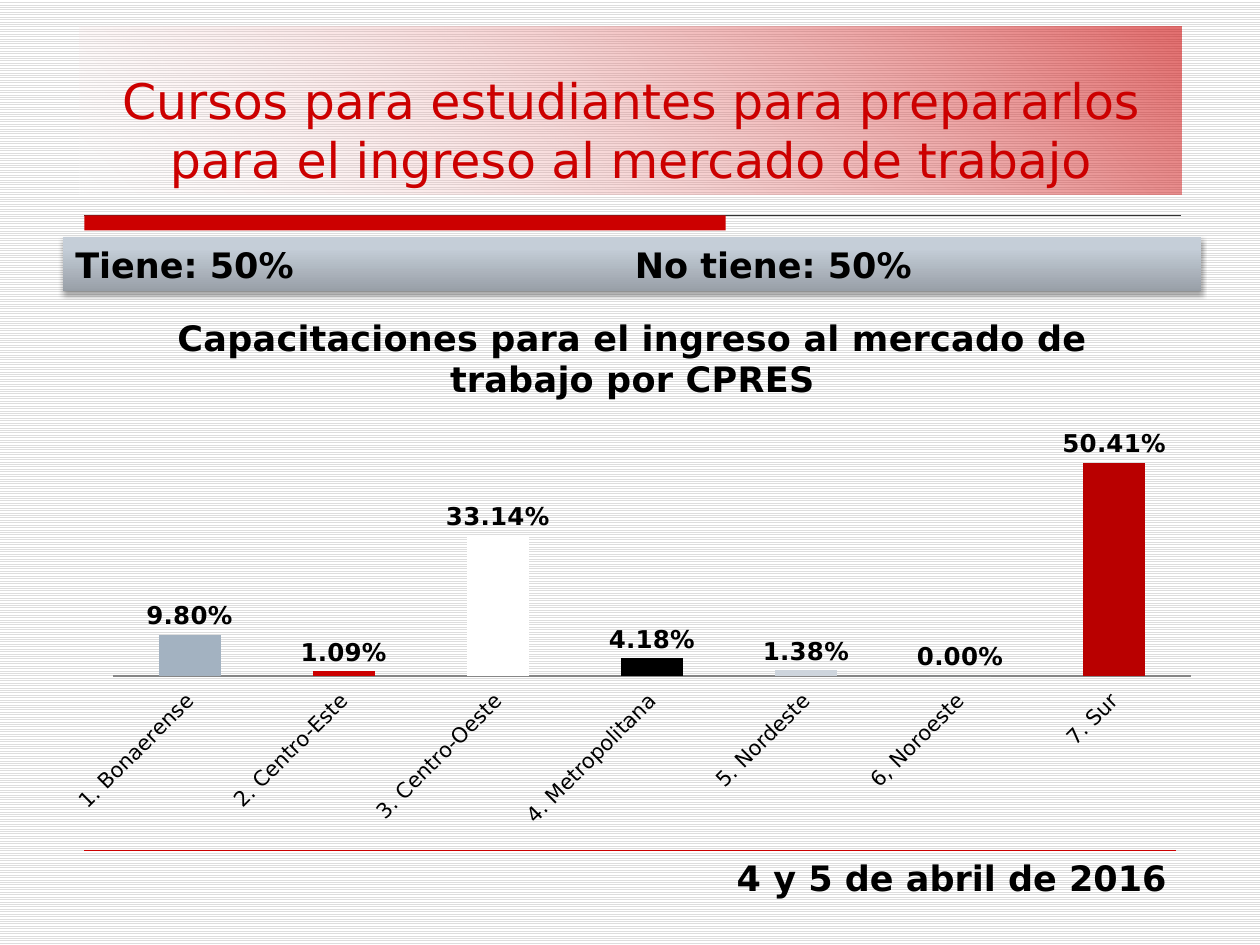
"""Build the slide on job-market preparation courses for students."""
from lxml.etree import SubElement
from pptx import Presentation
from pptx.chart.data import CategoryChartData
from pptx.dml.color import RGBColor
from pptx.enum.chart import XL_CHART_TYPE as ChartType
from pptx.enum.chart import XL_LABEL_POSITION as LabelPos
from pptx.enum.chart import XL_TICK_LABEL_POSITION as TickPos
from pptx.enum.chart import XL_TICK_MARK as Tick
from pptx.enum.dml import MSO_PATTERN as Pattern
from pptx.enum.shapes import MSO_CONNECTOR as Connector
from pptx.enum.shapes import MSO_SHAPE as Shape
from pptx.enum.text import MSO_ANCHOR as Anchor
from pptx.enum.text import PP_ALIGN as Align
from pptx.oxml import parse_xml
from pptx.oxml.ns import nsdecls, qn
from pptx.util import Pt

FONT = "DejaVu Sans"
RED = RGBColor(0xCC, 0x00, 0x00)
BLACK = RGBColor(0x00, 0x00, 0x00)
WHITE = RGBColor(0xFF, 0xFF, 0xFF)
STRIPE = RGBColor(0xDD, 0xDD, 0xDD)
RULE = RGBColor(0x33, 0x33, 0x33)
AXIS = RGBColor(0x86, 0x86, 0x86)
STEEL = RGBColor(0xA3, 0xB2, 0xC1)
MIST = RGBColor(0xCE, 0xD5, 0xDD)
DEEP_RED = RGBColor(0xB9, 0x00, 0x00)
BAND_DARK = RGBColor(0x98, 0x9F, 0xA7)
BAND_MID = RGBColor(0xC5, 0xCE, 0xD8)
BAND_LIGHT = RGBColor(0xC6, 0xCF, 0xDA)

HEADING = "Cursos para estudiantes para prepararlos para el ingreso al mercado de trabajo"
SHARES = ("Tiene: 50%", "No tiene: 50%")
DATE = "4 y 5 de abril de 2016"
CHART_TITLE = "Capacitaciones para el ingreso al mercado de trabajo por CPRES"
REGIONS = [
    ("1. Bonaerense", 0.098, STEEL),
    ("2. Centro-Este", 0.0109, RED),
    ("3. Centro-Oeste", 0.3314, WHITE),
    ("4. Metropolitana", 0.0418, BLACK),
    ("5. Nordeste", 0.0138, MIST),
    ("6, Noroeste", 0, STEEL),
    ("7. Sur", 0.5041, DEEP_RED),
]
HEADING_STOPS = [(0, WHITE, 16), (100, RED, 57)]
BAND_STOPS = [(0, BAND_DARK, 100), (80, BAND_MID, 100), (100, BAND_LIGHT, 100)]


def style(font, size, color=BLACK, bold=False):
    font.name, font.size, font.bold = FONT, Pt(size), bold
    font.color.rgb = color


def write(frame, text, size=20, color=BLACK, bold=True, align=Align.LEFT, anchor=Anchor.TOP):
    frame.word_wrap = True
    frame.vertical_anchor = anchor
    paragraph = frame.paragraphs[0]
    paragraph.alignment = align
    run = paragraph.add_run()
    run.text = text
    style(run.font, size, color, bold)
    return paragraph


def add_box(slide, left, top, width, height):
    box = slide.shapes.add_shape(Shape.RECTANGLE, Pt(left), Pt(top), Pt(width), Pt(height))
    box.shadow.inherit = False
    box.line.fill.background()
    return box


def add_rule(slide, left, right, y, color, weight):
    rule = slide.shapes.add_connector(Connector.STRAIGHT, Pt(left), Pt(y), Pt(right), Pt(y))
    rule.line.color.rgb = color
    rule.line.width = Pt(weight)
    SubElement(rule._element.spPr, qn("a:effectLst"))


def fill_gradient(box, stops, angle):
    marks = "".join(
        f'<a:gs pos="{pos * 1000}"><a:srgbClr val="{color}">'
        f'<a:alpha val="{alpha * 1000}"/></a:srgbClr></a:gs>'
        for pos, color, alpha in stops
    )
    gradient = parse_xml(
        f'<a:gradFill {nsdecls("a")} rotWithShape="1"><a:gsLst>{marks}</a:gsLst>'
        f'<a:lin ang="{angle * 60000}" scaled="0"/></a:gradFill>'
    )
    box._element.spPr.find(qn("a:prstGeom")).addnext(gradient)


def cast_shadow(box):
    effects = box._element.spPr.find(qn("a:effectLst"))
    effects.append(parse_xml(
        f'<a:outerShdw {nsdecls("a")} blurRad="{Pt(3.1)}" dist="{Pt(1.8)}" dir="5400000" '
        'rotWithShape="0"><a:srgbClr val="000000"><a:alpha val="35000"/></a:srgbClr></a:outerShdw>'
    ))


def add_region_chart(slide):
    data = CategoryChartData(number_format="0.00%")
    data.categories = [region for region, _, _ in REGIONS]
    data.add_series("Series 1", [share for _, share, _ in REGIONS])
    chart = slide.shapes.add_chart(
        ChartType.COLUMN_CLUSTERED, Pt(28.8), Pt(166.3), Pt(665.3), Pt(313.2), data
    ).chart
    style(chart.font, 10)
    chart.has_legend = False
    chart.has_title = True
    write(chart.chart_title.text_frame, CHART_TITLE, align=Align.CENTER)
    chart.chart_title.include_in_layout = False

    regions = chart.category_axis
    regions.major_tick_mark = regions.minor_tick_mark = Tick.NONE
    regions.tick_label_position = TickPos.LOW
    regions.format.line.color.rgb = AXIS
    style(regions.tick_labels.font, 12)
    regions._element.find(qn("c:txPr")).find(qn("a:bodyPr")).set("rot", "-2700000")
    chart.value_axis.visible = False
    chart.value_axis.has_major_gridlines = False

    plot = chart.plots[0]
    plot.gap_width = 150
    plot.vary_by_categories = False
    columns = plot.series[0]
    columns.format.fill.solid()
    columns.format.fill.fore_color.rgb = STEEL
    for index, (_, _, color) in enumerate(REGIONS):
        fill = columns.points[index].format.fill
        fill.solid()
        fill.fore_color.rgb = color
    labels = columns.data_labels
    labels.show_value = True
    labels.position = LabelPos.OUTSIDE_END
    labels.number_format, labels.number_format_is_linked = "0.00%", False
    style(labels.font, 14, bold=True)


def main():
    deck = Presentation()
    deck.slide_width, deck.slide_height = Pt(720), Pt(540)
    slide = deck.slides.add_slide(deck.slide_layouts[6])
    backdrop = slide.background.fill
    backdrop.patterned()
    backdrop.pattern = Pattern.LIGHT_HORIZONTAL
    backdrop.fore_color.rgb, backdrop.back_color.rgb = STRIPE, WHITE

    add_rule(slide, 48.2, 674.6, 123.1, RULE, 0.75)
    accent = add_box(slide, 48.2, 123.1, 366.5, 8.6)
    accent.fill.solid()
    accent.fill.fore_color.rgb = RED
    add_rule(slide, 48.2, 671.8, 486, RED, 0.25)

    heading = add_box(slide, 45.4, 15.1, 630, 95.8)
    fill_gradient(heading, HEADING_STOPS, 315)
    write(heading.text_frame, HEADING, size=28, color=RED, bold=False,
          align=Align.CENTER, anchor=Anchor.BOTTOM)

    date = slide.shapes.add_textbox(Pt(23.8), Pt(486), Pt(650.2), Pt(31))
    write(date.text_frame, DATE, align=Align.RIGHT)

    band = add_box(slide, 36, 135.4, 650.2, 31)
    fill_gradient(band, BAND_STOPS, 270)
    cast_shadow(band)
    shares = write(band.text_frame, "\t".join(SHARES))
    tabs = SubElement(shares._p.get_or_add_pPr(), qn("a:tabLst"))
    SubElement(tabs, qn("a:tab"), pos=str(Pt(319.7)), algn="l")

    add_region_chart(slide)
    deck.save("out.pptx")


if __name__ == "__main__":
    main()
